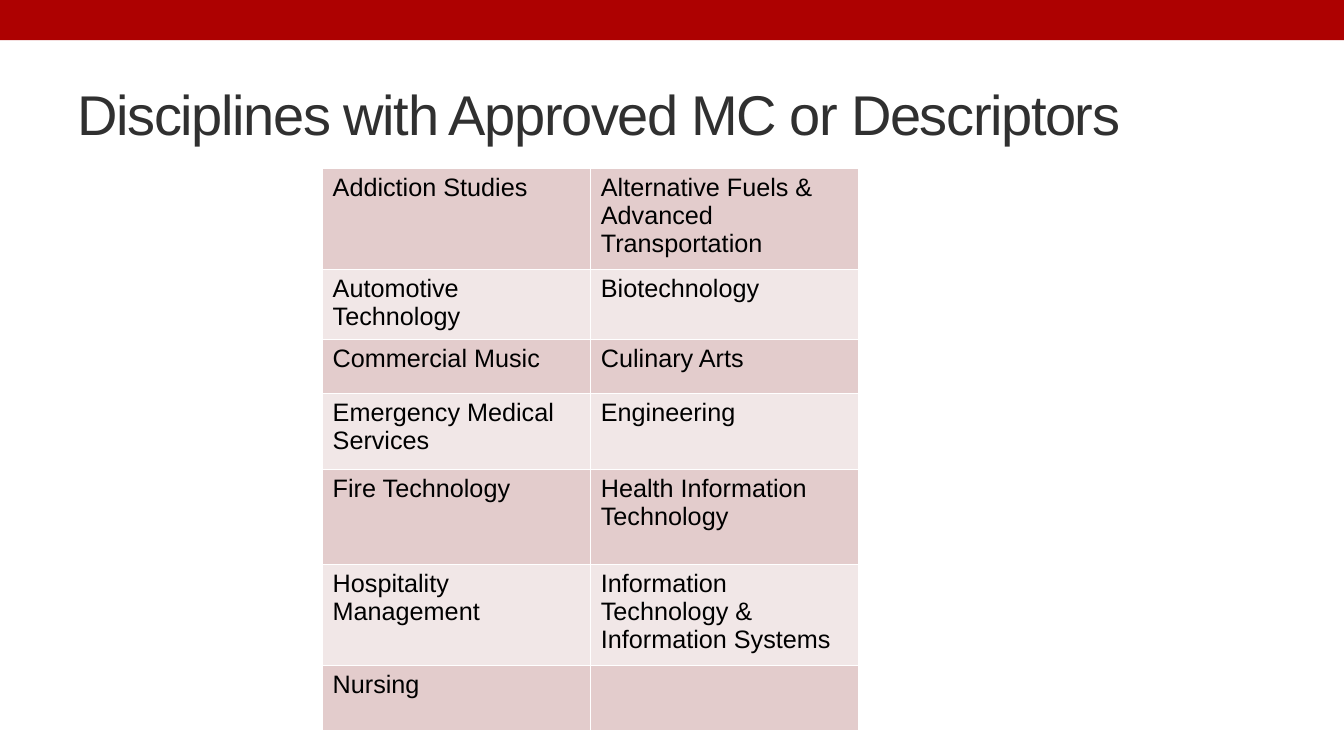
from pptx import Presentation
from pptx.dml.color import RGBColor
from pptx.enum import shapes, text
from pptx.oxml import parse_xml
from pptx.oxml.ns import nsdecls
from pptx.util import Inches, Pt

RED = RGBColor(0xAD, 0x01, 0x01)
CHARCOAL = RGBColor(0x30, 0x30, 0x30)
BLACK = RGBColor(0, 0, 0)
BANDS = RGBColor(0xE3, 0xCC, 0xCC), RGBColor(0xF1, 0xE7, 0xE7)
WHITE = RGBColor(0xFF, 0xFF, 0xFF)
FONT = "Arial"

DISCIPLINES = [
    ("Addiction Studies", "Alternative Fuels & Advanced Transportation"),
    ("Automotive Technology", "Biotechnology"),
    ("Commercial Music", "Culinary Arts"),
    ("Emergency Medical Services", "Engineering"),
    ("Fire Technology", "Health Information Technology"),
    ("Hospitality Management", "Information Technology & Information Systems"),
    ("Nursing", ""),
]
ROW_HEIGHTS = [0.93, 0.67, 0.53, 0.76, 0.94, 0.99, 0.65]
COLUMN_WIDTH = 2.66


def set_font(p, size, color):
    p.font.name = FONT
    p.font.size = Pt(size)
    p.font.color.rgb = color


def add_banner(s, width):
    sp = s.shapes.add_shape(shapes.MSO_SHAPE.RECTANGLE, 0, 0, width, Inches(0.4))
    sp.shadow.inherit = False
    sp.fill.solid()
    sp.fill.fore_color.rgb = RED
    sp.line.fill.background()


def add_title(s, title):
    sp = s.shapes.add_textbox(Inches(0.67), Inches(0.58), Inches(12), Inches(1.08))
    tf = sp.text_frame
    tf.word_wrap = True
    tf.vertical_anchor = text.MSO_ANCHOR.MIDDLE
    p = tf.paragraphs[0]
    r = p.add_run()
    r.text = title
    set_font(p, 40, CHARCOAL)
    r.font._element.set("spc", "-100")


def add_borders(cell):
    """Draw a 1 pt white line on each side; must precede the cell's fill."""
    tcPr = cell._tc.get_or_add_tcPr()
    for side in ("lnL", "lnR", "lnT", "lnB"):
        tcPr.append(parse_xml(
            f'<a:{side} {nsdecls("a")} w="{Pt(1)}"><a:solidFill>'
            f'<a:srgbClr val="{WHITE}"/></a:solidFill></a:{side}>'))


def add_discipline_table(s):
    rows, cols = len(DISCIPLINES), len(DISCIPLINES[0])
    table = s.shapes.add_table(
        rows, cols, Inches(3.2), Inches(1.67),
        Inches(cols * COLUMN_WIDTH), Inches(sum(ROW_HEIGHTS))).table
    table.first_row = False
    for column in table.columns:
        column.width = Inches(COLUMN_WIDTH)
    for i, (names, height) in enumerate(zip(DISCIPLINES, ROW_HEIGHTS)):
        table.rows[i].height = Inches(height)
        for cell, name in zip(table.rows[i].cells, names):
            add_borders(cell)
            cell.fill.solid()
            cell.fill.fore_color.rgb = BANDS[i % 2]
            cell.text = name
            set_font(cell.text_frame.paragraphs[0], 18, BLACK)


def main():
    prs = Presentation()
    prs.slide_width, prs.slide_height = Inches(13.33), Inches(7.5)
    s = prs.slides.add_slide(prs.slide_layouts[6])
    add_banner(s, prs.slide_width)
    add_title(s, "Disciplines with Approved MC or Descriptors")
    add_discipline_table(s)
    prs.save("out.pptx")


if __name__ == "__main__":
    main()
